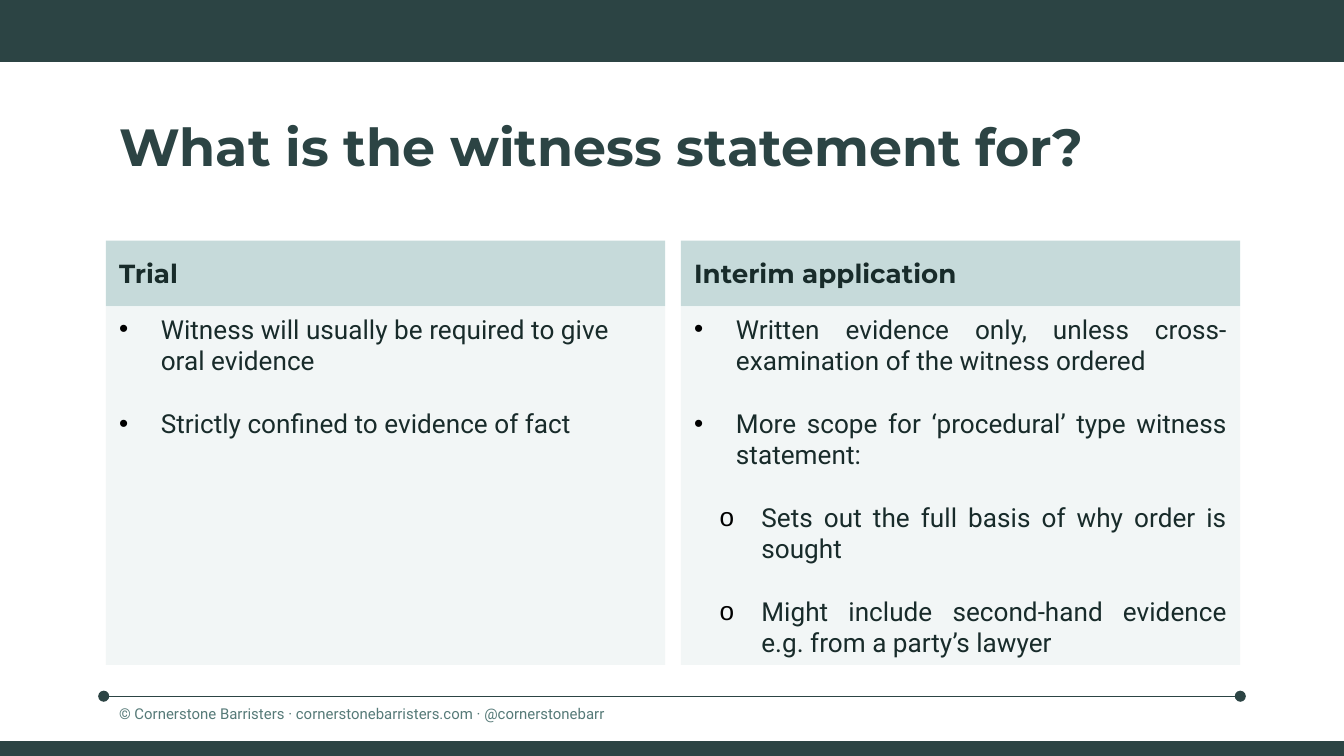
from dataclasses import dataclass

from lxml import etree
from pptx import Presentation
from pptx import util as u
from pptx.dml.color import RGBColor
from pptx.enum import shapes, text
from pptx.oxml import ns


@dataclass(frozen=True)
class Theme:
    """Colours, fonts and type sizes of the slide."""
    dark: str = "2C4444"
    ink: str = "182B2A"
    muted: str = "567A78"
    header: str = "C6DADA"
    panel: str = "F2F6F6"
    bullet: str = "000000"
    heading_font: str = "Montserrat"
    body_font: str = "Roboto"
    title_size: float = 28
    body_size: float = 14
    footer_size: float = 8
    item_gap: float = 16.8


THEME = Theme()
WIDTH, HEIGHT = u.Cm(25.4), u.Cm(14.29)
MARGIN = u.Cm(2)
COLUMN_WIDTH, COLUMN_PITCH = u.Cm(10.57), u.Cm(10.87)
HEADER_TOP, HEADER_HEIGHT, PANEL_HEIGHT = u.Cm(4.55), u.Cm(1.24), u.Cm(6.78)
HANGING = u.Cm(0.79)
LEVELS = [("•", HANGING), ("o", u.Cm(1.27))]

COLUMNS = [
    ("Trial", text.PP_ALIGN.LEFT, [
        (0, "Witness will usually be required to give oral evidence"),
        (0, "Strictly confined to evidence of fact"),
    ]),
    ("Interim application", text.PP_ALIGN.JUSTIFY, [
        (0, "Written evidence only, unless cross-examination of the witness ordered"),
        (0, "More scope for ‘procedural’ type witness statement:"),
        (1, "Sets out the full basis of why order is sought"),
        (1, "Might include second-hand evidence e.g. from a party’s lawyer"),
    ]),
]


def add_run(paragraph, words, font, size, colour, bold=False):
    """Add one formatted run to a paragraph."""
    run = paragraph.add_run()
    run.text = words
    run.font.name = font
    run.font.size = u.Pt(size)
    run.font.bold = bold
    run.font.color.rgb = RGBColor.from_string(colour)


def set_frame(frame, anchor, vertical_inset=u.Cm(0.13)):
    """Set wrapping, anchor and insets of a text frame."""
    frame.word_wrap = True
    frame.auto_size = text.MSO_AUTO_SIZE.NONE
    frame.vertical_anchor = anchor
    frame.margin_left = frame.margin_right = u.Cm(0.25)
    frame.margin_top = frame.margin_bottom = vertical_inset


def add_block(slide, left, top, width, height, colour):
    """Add a plain filled rectangle."""
    shape = slide.shapes.add_shape(shapes.MSO_SHAPE.RECTANGLE, left, top, width, height)
    shape.shadow.inherit = False
    shape.fill.solid()
    shape.fill.fore_color.rgb = RGBColor.from_string(colour)
    shape.line.fill.background()
    return shape


def set_bullet(paragraph, level):
    """Give a paragraph the hanging bullet of its level."""
    character, indent = LEVELS[level]
    paragraph.level = level
    properties = paragraph._p.get_or_add_pPr()
    properties.set("marL", str(indent))
    properties.set("indent", str(-HANGING))
    colour = etree.SubElement(properties, ns.qn("a:buClr"))
    etree.SubElement(colour, ns.qn("a:srgbClr"), val=THEME.bullet)
    etree.SubElement(properties, ns.qn("a:buFont"), typeface="Arial")
    etree.SubElement(properties, ns.qn("a:buChar"), char=character)


def add_title(slide, words):
    """Place and format the title placeholder."""
    title = slide.shapes.title
    title.left, title.top = MARGIN, u.Cm(2.03)
    title.width, title.height = u.Cm(21.44), u.Cm(1.47)
    set_frame(title.text_frame, text.MSO_ANCHOR.TOP)
    paragraph = title.text_frame.paragraphs[0]
    paragraph.alignment = text.PP_ALIGN.LEFT
    add_run(paragraph, words, THEME.heading_font, THEME.title_size, THEME.dark, True)


def add_column(slide, left, heading, alignment, items):
    """Add a heading block with a bulleted panel below it."""
    panel = add_block(slide, left, HEADER_TOP + HEADER_HEIGHT,
                      COLUMN_WIDTH, PANEL_HEIGHT, THEME.panel)
    frame = panel.text_frame
    set_frame(frame, text.MSO_ANCHOR.TOP)
    for index, (level, words) in enumerate(items):
        paragraph = frame.add_paragraph() if index else frame.paragraphs[0]
        set_bullet(paragraph, level)
        paragraph.alignment = alignment
        if index:
            paragraph.space_before = u.Pt(THEME.item_gap)
        add_run(paragraph, words, THEME.body_font, THEME.body_size, THEME.ink)
    header = add_block(slide, left, HEADER_TOP, COLUMN_WIDTH, HEADER_HEIGHT, THEME.header)
    set_frame(header.text_frame, text.MSO_ANCHOR.MIDDLE)
    paragraph = header.text_frame.paragraphs[0]
    paragraph.alignment = text.PP_ALIGN.LEFT
    add_run(paragraph, heading, THEME.heading_font, THEME.body_size, THEME.ink, True)


def add_footer_rule(slide):
    """Add the footer line with a dot at each end."""
    left, y = u.Cm(1.96), u.Cm(13.16)
    rule = slide.shapes.add_connector(shapes.MSO_CONNECTOR.STRAIGHT, left, y, WIDTH - left, y)
    rule.line.color.rgb = RGBColor.from_string(THEME.dark)
    rule.line.width = u.Pt(0.75)
    line = rule.line._get_or_add_ln()
    for end in ("a:headEnd", "a:tailEnd"):
        etree.SubElement(line, ns.qn(end), type="oval", w="med", len="med")
    etree.SubElement(rule._element.spPr, ns.qn("a:effectLst"))


def add_footer(slide, words):
    """Add the footer text."""
    box = slide.shapes.add_textbox(MARGIN, u.Cm(13.06), u.Cm(12.57), u.Cm(0.79))
    set_frame(box.text_frame, text.MSO_ANCHOR.TOP, u.Cm(0.25))
    add_run(box.text_frame.paragraphs[0], words,
            THEME.body_font, THEME.footer_size, THEME.muted)


def main():
    """Build and save the slide."""
    presentation = Presentation()
    presentation.slide_width, presentation.slide_height = WIDTH, HEIGHT
    slide = presentation.slides.add_slide(presentation.slide_layouts[5])
    add_footer_rule(slide)
    add_block(slide, 0, 0, WIDTH, u.Cm(1.17), THEME.dark)
    add_footer(slide, "© Cornerstone Barristers · cornerstonebarristers.com · @cornerstonebarr")
    base_height = u.Cm(0.28)
    add_block(slide, 0, HEIGHT - base_height, WIDTH, base_height, THEME.dark)
    add_title(slide, "What is the witness statement for?")
    for index, column in enumerate(COLUMNS):
        add_column(slide, MARGIN + index * COLUMN_PITCH, *column)
    presentation.save("out.pptx")


if __name__ == "__main__":
    main()
